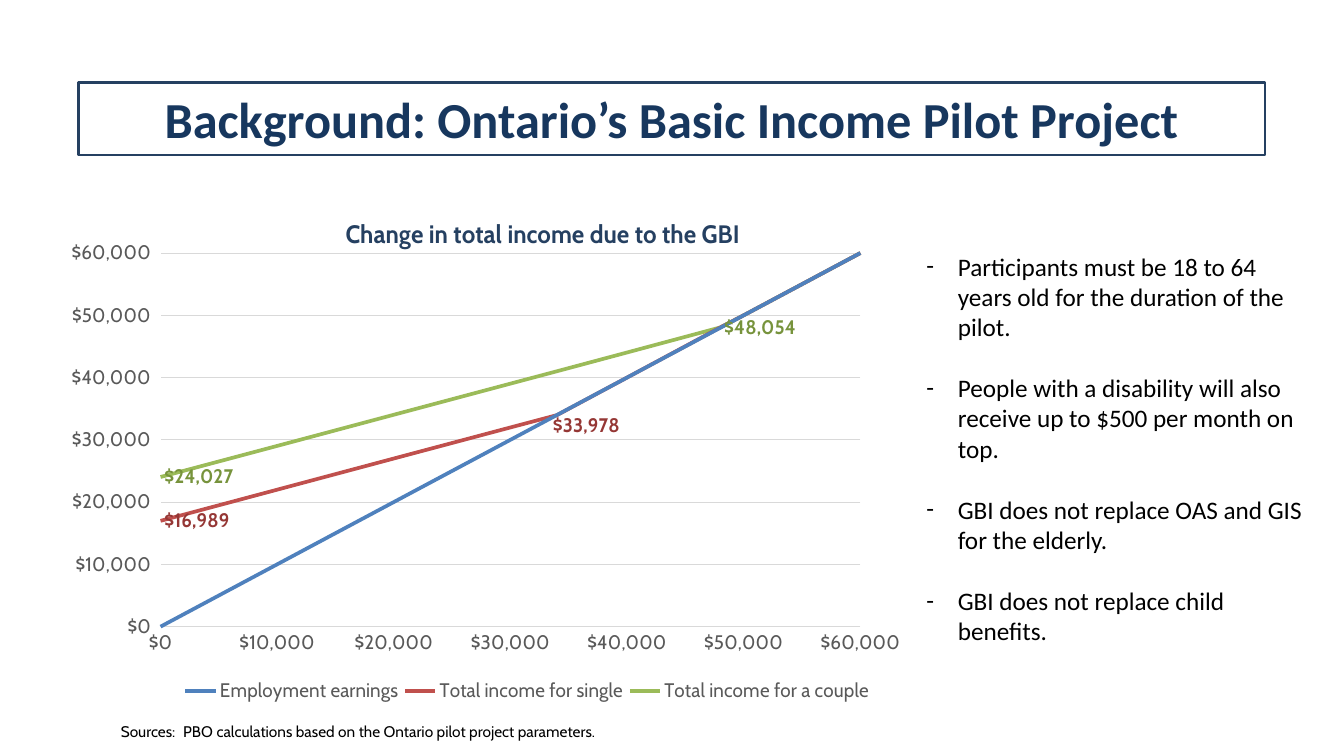
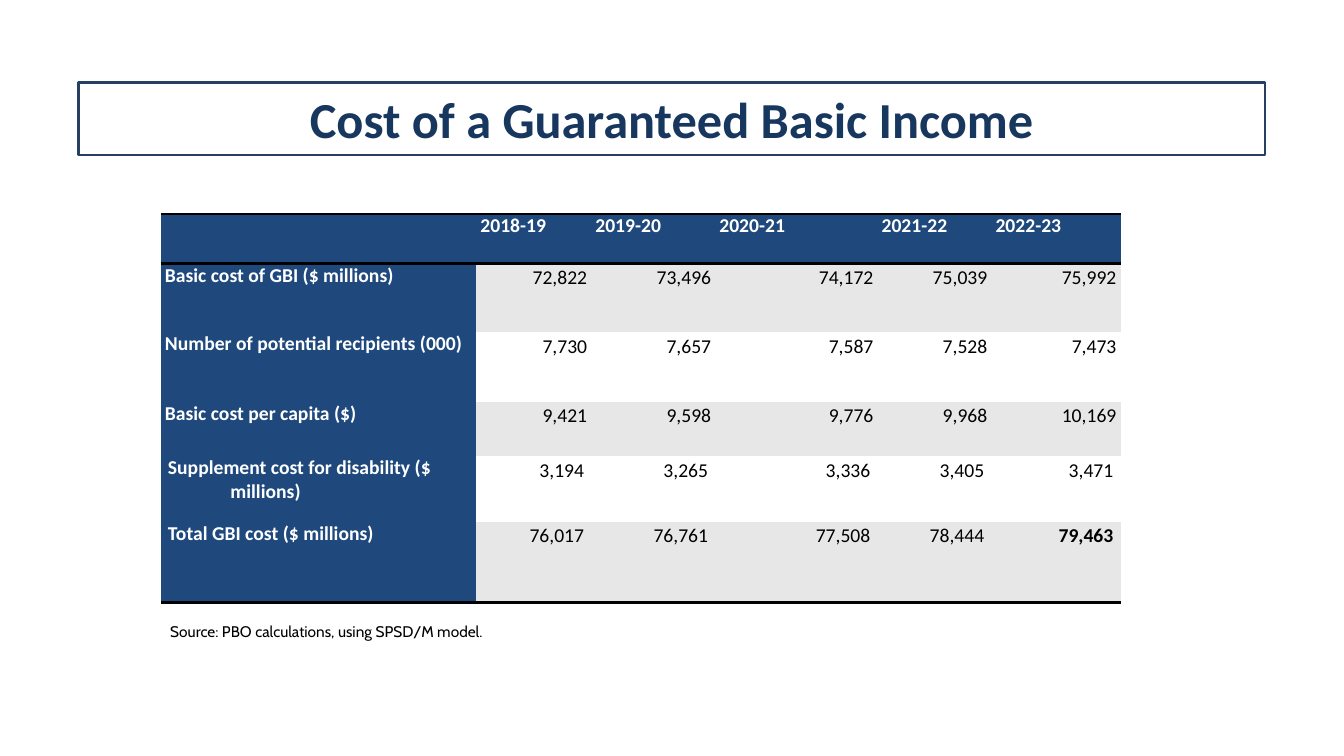
"""Build two slides on a guaranteed basic income."""
from dataclasses import dataclass, replace
from typing import Any

from lxml.etree import SubElement
from pptx import Presentation
from pptx.chart.data import XyChartData
from pptx.chart.datalabel import DataLabels
from pptx.dml.color import RGBColor
from pptx.enum.chart import (XL_CHART_TYPE, XL_LABEL_POSITION, XL_LEGEND_POSITION,
                             XL_TICK_LABEL_POSITION, XL_TICK_MARK)
from pptx.enum.text import MSO_ANCHOR, MSO_AUTO_SIZE, PP_ALIGN
from pptx.oxml import parse_xml
from pptx.oxml.ns import nsdecls, qn
from pptx.util import Pt

NAVY, INK, BLUE = "254061", "17375E", "1F497D"
BLACK, WHITE, GREY, SHADE, GRID = "000000", "FFFFFF", "595959", "E7E7E7", "D9D9D9"
MONEY = '"$"#,##0'
HANG = 44.6


@dataclass(frozen=True)
class Box:
    """A place on the slide, in points."""
    x: float
    y: float
    w: float
    h: float


@dataclass(frozen=True)
class Face:
    """The look of a run of text."""
    size: float
    color: str = BLACK
    bold: bool = False
    name: str = "Calibri"


@dataclass(frozen=True)
class Curve:
    """A chart line with its values and labelled points."""
    name: str
    color: str
    vals: tuple[int, ...]
    ink: str = BLACK
    marks: tuple[int, ...] = ()


@dataclass(frozen=True)
class Row:
    """A table row with its height and side inset."""
    high: float
    pad: float
    cells: tuple[str, ...]


HEAD = Face(36, INK, True)
NOTE = Face(11, name="Cabin")
TICK = Face(14, GREY, name="Cabin")
STEPS = (0, 10000, 20000, 30000, 34000, 40000, 48000, 50000, 60000)
CURVES = (
    Curve("Employment earnings", "4F81BD", STEPS),
    Curve("Total income for single", "C0504D",
          (16989, 21989, 26989, 31989, 33978, 40000, 48054, 50000, 60000), "953735", (0, 4)),
    Curve("Total income for a couple", "9BBB59",
          (24027, 29027, 34027, 39027, 41016, 44027, 48054, 50000, 60000), "77933C", (0, 6)),
)
POINTS = (
    "Participants must be 18 to 64 years old for the duration of the pilot.",
    "People with a disability will also receive up to $500 per month on top.",
    "GBI does not replace OAS and GIS for the elderly.",
    "GBI does not replace child benefits.",
)
WIDTHS = (225.4, 82.1, 88.6, 115.9, 81.4, 92.2)
ROWS = (
    Row(35.3, 2.9, ("", "2018-19", "2019-20", "2020-21", "2021-22", "2022-23")),
    Row(49, 2.9, ("Basic cost of GBI ($ millions)", "72,822", "73,496", "74,172", "75,039", "75,992")),
    Row(49.7, 2.9, ("Number of potential recipients (000)", "7,730", "7,657", "7,587", "7,528", "7,473")),
    Row(39, 2.9, ("Basic cost per capita ($)", "9,421", "9,598", "9,776", "9,968", "10,169")),
    Row(46.8, 5.1, ("Supplement cost for disability ($ millions)", "3,194", "3,265", "3,336", "3,405", "3,471")),
    Row(57.8, 5.1, ("Total GBI cost ($ millions)", "76,017", "76,761", "77,508", "78,444", "79,463")),
)


def tint(code: str) -> RGBColor:
    """Turn a hex string into a colour."""
    return RGBColor.from_string(code)


def dress(font: Any, face: Face) -> None:
    """Give a font the look of a face."""
    font.size, font.bold, font.name = Pt(face.size), face.bold, face.name
    font.color.rgb = tint(face.color)


def write(para: Any, text: str, face: Face) -> None:
    """Add one run to a paragraph."""
    run = para.add_run()
    run.text = text
    dress(run.font, face)


def hang(para: Any, left: float) -> Any:
    """Set a hanging indent and return the paragraph properties."""
    props = para._p.get_or_add_pPr()
    props.set("marL", str(Pt(left)))
    props.set("indent", str(-Pt(left)))
    return props


def tab(props: Any, stop: float) -> None:
    """Add a left tab stop."""
    stops = SubElement(props, qn("a:tabLst"))
    SubElement(stops, qn("a:tab"), pos=str(Pt(stop)), algn="l")


def place(shape: Any, box: Box) -> None:
    """Move a shape to its box."""
    shape.left, shape.top = Pt(box.x), Pt(box.y)
    shape.width, shape.height = Pt(box.w), Pt(box.h)


def title(slide: Any, text: str) -> None:
    """Fill the framed title."""
    shape = slide.shapes.title
    place(shape, Box(56.2, 59, 847.4, 51.8))
    shape.line.color.rgb, shape.line.width = tint(NAVY), Pt(1.75)
    frame = shape.text_frame
    frame.auto_size, frame.vertical_anchor = MSO_AUTO_SIZE.NONE, MSO_ANCHOR.MIDDLE
    para = frame.paragraphs[0]
    para.alignment = PP_ALIGN.CENTER
    write(para, text, HEAD)


def note(slide: Any, box: Box, text: str, wrap: bool) -> None:
    """Add a source note."""
    shape = slide.shapes.add_textbox(Pt(box.x), Pt(box.y), Pt(box.w), Pt(box.h))
    frame = shape.text_frame
    frame.word_wrap, frame.auto_size = wrap, MSO_AUTO_SIZE.SHAPE_TO_FIT_TEXT
    para = frame.paragraphs[0]
    if wrap:
        tab(hang(para, HANG), HANG)
    write(para, text, NOTE)


def points(shape: Any) -> None:
    """Fill the body with dashed points."""
    place(shape, Box(654.5, 175.7, 288, 312.5))
    frame = shape.text_frame
    frame.auto_size, frame.vertical_anchor = MSO_AUTO_SIZE.NONE, MSO_ANCHOR.TOP
    for k, text in enumerate(POINTS):
        para = frame.add_paragraph() if k else frame.paragraphs[0]
        para.space_before = Pt(22 if k else 0)
        props = hang(para, 22.5)
        SubElement(props, qn("a:buFont"), typeface="Calibri")
        SubElement(props, qn("a:buChar"), char="-")
        write(para, text, Face(18))


def layout(node: Any, index: int, inner: bool = False, **parts: float) -> None:
    """Set a manual layout on a chart part."""
    for old in node.findall(qn("c:layout")):
        node.remove(old)
    root = parse_xml(f"<c:layout {nsdecls('c')}><c:manualLayout/></c:layout>")
    if inner:
        SubElement(root[0], qn("c:layoutTarget"), val="inner")
    if index == 0 or node.tag != qn("c:dLbl"):
        for mode in ("xMode", "yMode"):
            SubElement(root[0], qn(f"c:{mode}"), val="edge")
    for key, val in parts.items():
        SubElement(root[0], qn(f"c:{key}"), val=str(val))
    node.insert(index, root)


def style(line: Any, curve: Curve) -> None:
    """Colour a chart line and label its points."""
    line.smooth = False
    line.format.line.color.rgb, line.format.line.width = tint(curve.color), Pt(2.75)
    if curve.marks:
        DataLabels(line._element.get_or_add_dLbls()).show_value = False
    for mark in curve.marks:
        label = line.points[mark].data_label
        dress(label.font, Face(14, curve.ink, True, "Cabin"))
        label.position = XL_LABEL_POSITION.RIGHT
        if mark == 4:
            node = next(n for n in line._element.iter(qn("c:dLbl"))
                        if n.find(qn("c:idx")).get("val") == str(mark))
            layout(node, 1, x=-0.01, y=0.02)


def graph(slide: Any) -> None:
    """Add the income chart."""
    data = XyChartData(number_format=MONEY)
    for curve in CURVES:
        group = data.add_series(curve.name)
        for x, y in zip(STEPS, curve.vals):
            group.add_data_point(x, y)
    chart = slide.shapes.add_chart(XL_CHART_TYPE.XY_SCATTER_LINES_NO_MARKERS, Pt(51.1), Pt(132.5),
                                   Pt(603.4), Pt(380.2), data).chart
    dress(chart.font, Face(10))
    plot = chart.plots[0]
    plot.vary_by_categories = False
    for line, curve in zip(plot.series, CURVES):
        style(line, curve)
    for axis in (chart.category_axis, chart.value_axis):
        axis.minimum_scale, axis.maximum_scale, axis.major_unit = 0, 60000, 10000
        axis.major_tick_mark = axis.minor_tick_mark = XL_TICK_MARK.NONE
        axis.format.line.fill.background()
        labels = axis.tick_labels
        labels.number_format, labels.number_format_is_linked = MONEY, False
        dress(labels.font, TICK)
    chart.category_axis.has_major_gridlines = False
    axis = chart.value_axis
    axis.tick_label_position = XL_TICK_LABEL_POSITION.LOW
    axis.has_major_gridlines = True
    grid = axis.major_gridlines.format.line
    grid.color.rgb, grid.width = tint(GRID), Pt(0.75)
    chart.has_title = chart.has_legend = True
    write(chart.chart_title.text_frame.paragraphs[0], "Change in total income due to the GBI",
          Face(18, NAVY, True, "Cabin"))
    legend = chart.legend
    legend.position, legend.include_in_layout = XL_LEGEND_POSITION.BOTTOM, False
    dress(legend.font, TICK)
    layout(chart.chart_title._element, 1, x=0.29, y=0.05)
    layout(legend._element, 1, x=0.09, y=0.92, w=0.86, h=0.06)
    area = chart._chartSpace.find(f".//{qn('c:plotArea')}")
    layout(area, 0, True, x=0.067, y=0.127, w=0.864, h=0.702)


def rule(cell: Any, side: str) -> None:
    """Draw a black border on one side of a cell."""
    cell._tc.get_or_add_tcPr().insert(0, parse_xml(
        f'<a:{side} {nsdecls("a")} w="{Pt(2)}"><a:solidFill><a:srgbClr val="{BLACK}"/>'
        f'</a:solidFill></a:{side}>'))


def table(slide: Any) -> None:
    """Add the cost table."""
    grid = slide.shapes.add_table(len(ROWS), len(WIDTHS), Pt(114.9), Pt(152.9), Pt(sum(WIDTHS)),
                                  Pt(sum(row.high for row in ROWS))).table
    grid.first_row = grid.horz_banding = False
    grid._tbl.tblPr.find(qn("a:tableStyleId")).text = "{2D5ABB26-0587-4C30-8999-92F81FD0307C}"
    for col, wide in zip(grid.columns, WIDTHS):
        col.width = Pt(wide)
    last = len(ROWS) - 1
    for r, row in enumerate(ROWS):
        grid.rows[r].height = Pt(row.high)
        for c, text in enumerate(row.cells):
            cell = grid.cell(r, c)
            head = r == 0 or c == 0
            cell.margin_left = cell.margin_right = Pt(row.pad)
            cell.margin_top = cell.margin_bottom = 0
            cell.fill.solid()
            cell.fill.fore_color.rgb = tint(BLUE if head else SHADE if r % 2 else WHITE)
            if r in (0, last):
                rule(cell, "lnB")
            if r == 0:
                rule(cell, "lnT")
            para = cell.text_frame.paragraphs[0]
            face = Face(14, WHITE, True) if head else Face(14)
            if head:
                tab(hang(para, HANG), HANG)
            else:
                para.alignment, para.line_spacing = PP_ALIGN.RIGHT, 1.1
                if r == last and c == len(WIDTHS) - 1:
                    face = replace(face, bold=True)
            if text:
                write(para, text, face)


def main() -> None:
    """Build and save the deck."""
    deck = Presentation()
    deck.slide_width, deck.slide_height = Pt(960), Pt(540)
    slide = deck.slides.add_slide(deck.slide_layouts[1])
    title(slide, "Background: Ontario’s Basic Income Pilot Project")
    points(slide.placeholders[1])
    graph(slide)
    note(slide, Box(79.2, 512, 380, 20.9),
         "Sources: \tPBO calculations based on the Ontario pilot project parameters.", True)
    slide = deck.slides.add_slide(deck.slide_layouts[5])
    title(slide, "Cost of a Guaranteed Basic Income")
    table(slide)
    note(slide, Box(114.5, 440.6, 246.2, 20.9), "Source: PBO calculations, using SPSD/M model.", False)
    deck.save("out.pptx")


if __name__ == "__main__":
    main()
